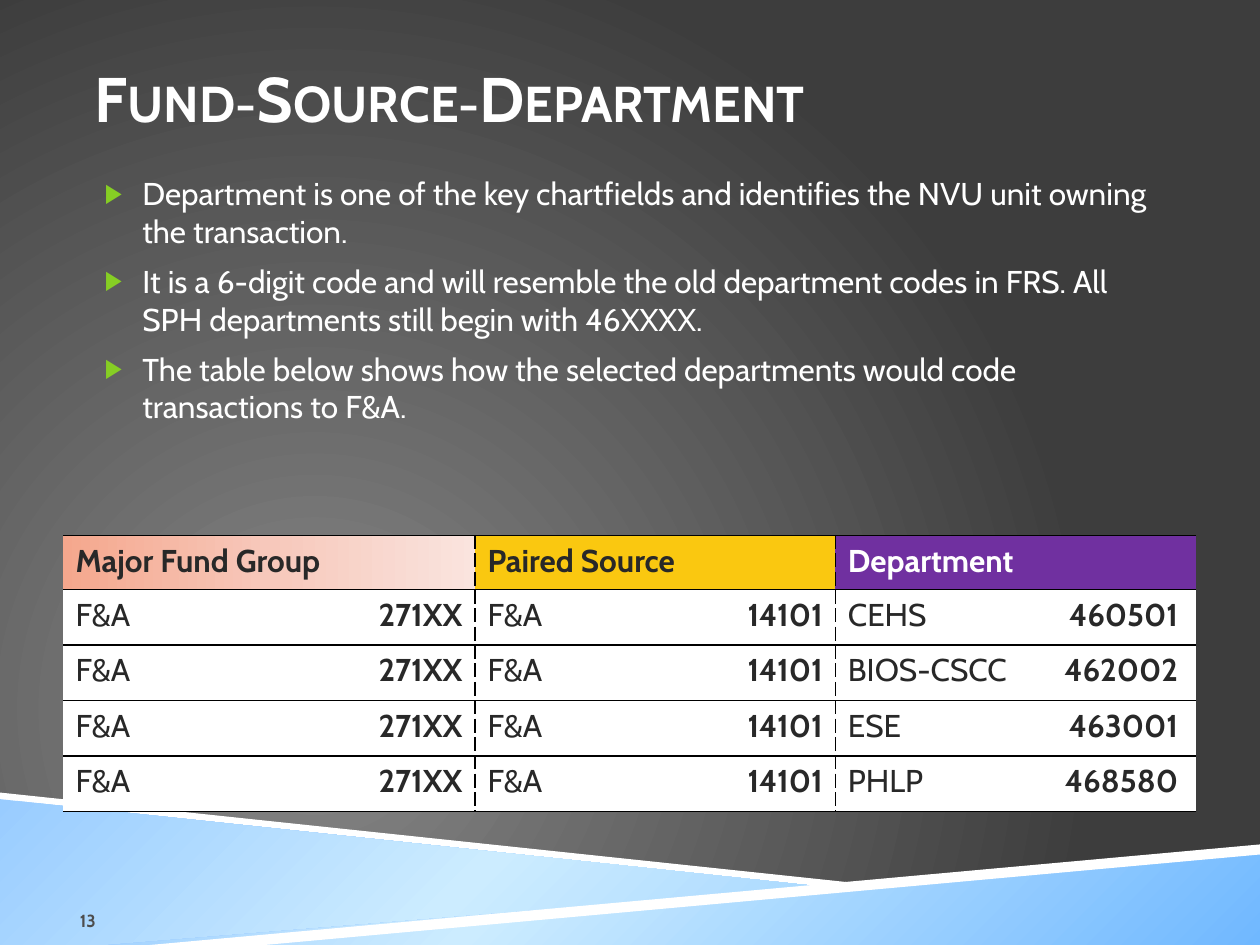
from lxml import etree
from pptx import Presentation
from pptx import util as u
from pptx.dml.color import RGBColor
from pptx.enum import shapes, text
from pptx.oxml import parse_xml
from pptx.oxml.ns import nsdecls, qn

FONT = "Cabin"
WHITE, INK, BLACK = "FFFFFF", "282828", "000000"
SKY = [(0, "70B8FF"), (64, "CCECFF"), (100, "99CCFF")]
SALMON = [(0, "F5A78D"), (50, "F7C8BB"), (100, "FAE4DE")]

BULLETS = [
    "Department is one of the key chartfields and identifies the NVU unit owning the transaction.",
    "It is a 6-digit code and will resemble the old department codes in FRS. "
    "All SPH departments still begin with 46XXXX.",
    "The table below shows how the selected departments would code transactions to F&A.",
]
# heading, heading colour, fill, column width, tab stop
COLUMNS = [
    ("Major Fund Group", INK, None, 3.27, 3.81),
    ("Paired Source", INK, "FAC810", 2.86, 4.87),
    ("Department", WHITE, "7030A0", 2.86, 2.62),
]
DEPARTMENTS = [("CEHS", "460501"), ("BIOS-CSCC", "462002"),
               ("ESE", "463001"), ("PHLP", "468580")]


def rgb(code):
    return RGBColor.from_string(code)


def set_font(font, size, color, bold=False):
    font.name, font.size, font.bold = FONT, u.Pt(size), bold
    font.color.rgb = rgb(color)


def paint_gradient(fill, owner, stops, focus=None):
    """Fill with a gradient: left to right, or round the focus (l, t, r, b in percent)."""
    fill.solid()
    solid = next(owner.iter(qn("a:solidFill")))
    marks = "".join(f'<a:gs pos="{at * 1000}"><a:srgbClr val="{code}"/></a:gs>'
                    for at, code in stops)
    shade = '<a:lin ang="0" scaled="0"/>'
    if focus:
        sides = " ".join(f'{side}="{share * 1000}"' for side, share in zip("ltrb", focus))
        shade = f'<a:path path="circle"><a:fillToRect {sides}/></a:path>'
    solid.getparent().replace(solid, parse_xml(
        f'<a:gradFill {nsdecls("a")} rotWithShape="1"><a:gsLst>{marks}</a:gsLst>{shade}</a:gradFill>'))


def add_band(slide, points):
    corners = [(u.Inches(x), u.Inches(y)) for x, y in points]
    builder = slide.shapes.build_freeform(*corners[0])
    builder.add_line_segments(corners[1:], close=True)
    band = builder.convert_to_shape()
    band.shadow.inherit = False
    band.fill.solid()
    band.fill.fore_color.rgb = rgb(WHITE)
    band.line.fill.background()


def add_wedge(slide, left, top, width, height, rotation, flip=False):
    wedge = slide.shapes.add_shape(shapes.MSO_SHAPE.ISOSCELES_TRIANGLE,
                                   *map(u.Inches, (left, top, width, height)))
    wedge.adjustments[0] = 0
    wedge.rotation = rotation
    if flip:
        wedge.element.spPr.find(qn("a:xfrm")).set("flipH", "1")
    wedge.shadow.inherit = False
    wedge.line.fill.background()
    paint_gradient(wedge.fill, wedge.element.spPr, SKY, (100, 100, 0, 0))


def place_text(shape, left, top, width, height, anchor):
    shape.left, shape.top, shape.width, shape.height = map(u.Inches, (left, top, width, height))
    frame = shape.text_frame
    frame.word_wrap = True
    frame.auto_size = text.MSO_AUTO_SIZE.NONE
    frame.vertical_anchor = anchor
    frame.margin_left = frame.margin_right = 0
    frame.margin_top = frame.margin_bottom = u.Inches(0.05)
    return frame


def add_title(slide):
    title = slide.shapes.title
    slide.shapes.element.append(title.element)  # in front of the wedges
    frame = place_text(title, 0.75, 0.3, 8.5, 0.95, text.MSO_ANCHOR.MIDDLE)
    frame.text = "Fund-Source-Department"
    heading = frame.paragraphs[0]
    heading.alignment = text.PP_ALIGN.LEFT
    set_font(heading.font, 36, WHITE, True)
    next(title.element.iter(qn("a:defRPr"))).set("cap", "small")


def add_bullets(slide):
    body = slide.placeholders[1]
    slide.shapes.element.append(body.element)
    frame = place_text(body, 0.75, 1.33, 8.5, 4.95, text.MSO_ANCHOR.TOP)
    frame.text = "\n".join(BULLETS)
    marks = [f'<a:buClr {nsdecls("a")}><a:srgbClr val="86CE24"/></a:buClr>',
             f'<a:buSzPct {nsdecls("a")} val="85000"/>',
             f'<a:buChar {nsdecls("a")} char="▶"/>']
    for point in frame.paragraphs:
        point.space_before = u.Pt(7)
        set_font(point.font, 18, WHITE)
        props = point._p.get_or_add_pPr()
        props.set("marL", str(u.Inches(0.38)))
        props.set("indent", str(u.Inches(-0.3)))
        for mark in marks:
            props.find(qn("a:defRPr")).addprevious(parse_xml(mark))


def add_page_number(slide):
    box = slide.shapes.add_textbox(0, 0, 0, 0)
    frame = place_text(box, 0.26, 6.99, 0.5, 0.4, text.MSO_ANCHOR.BOTTOM)
    frame.margin_bottom = 0
    number = frame.paragraphs[0]
    number.text = "13"
    number.alignment = text.PP_ALIGN.RIGHT
    set_font(number.font, 10, "4D4D4D", True)


def set_borders(cell, col):
    """Solid rules above and below, dashed rules between columns, open outer sides."""
    styles = {"lnL": "dash" if col else None,
              "lnR": "dash" if col < len(COLUMNS) - 1 else None,
              "lnT": "solid", "lnB": "solid"}
    props = cell._tc.get_or_add_tcPr()
    for place, (side, dash) in enumerate(styles.items()):
        line = etree.Element(qn(f"a:{side}"), w=str(u.Pt(1)))
        if dash:
            color = etree.SubElement(line, qn("a:solidFill"))
            etree.SubElement(color, qn("a:srgbClr"), val=BLACK)
            etree.SubElement(line, qn("a:prstDash"), val=dash)
        else:
            etree.SubElement(line, qn("a:noFill"))
        props.insert(place, line)


def fill_cell(cell, col, color):
    if color:
        cell.fill.solid()
        cell.fill.fore_color.rgb = rgb(color)
    else:
        paint_gradient(cell.fill, cell._tc.get_or_add_tcPr(), SALMON)
    set_borders(cell, col)


def write_entry(cell, label, code, tab_stop):
    entry = cell.text_frame.paragraphs[0]
    set_font(entry.font, 18, INK)
    tabs = parse_xml(f'<a:tabLst {nsdecls("a")}><a:tab pos="{u.Inches(tab_stop)}" algn="r"/></a:tabLst>')
    entry._p.get_or_add_pPr().find(qn("a:defRPr")).addprevious(tabs)
    for words, bold in ((label + "\t", False), (code, True)):
        run = entry.add_run()
        run.text = words
        run.font.bold = bold


def add_fund_table(slide):
    frame = slide.shapes.add_table(len(DEPARTMENTS) + 1, len(COLUMNS), u.Inches(0.5),
                                   u.Inches(4.25), u.Inches(9), u.Inches(2.19))
    table = frame.table
    table.first_row = table.horz_banding = False
    for row in table.rows:
        row.height = u.Inches(0.44)
    table.rows[0].height = u.Inches(0.43)
    for col, (heading, color, fill, width, tab_stop) in enumerate(COLUMNS):
        table.columns[col].width = u.Inches(width)
        head = table.cell(0, col)
        head.text = heading
        set_font(head.text_frame.paragraphs[0].font, 18, color, True)
        fill_cell(head, col, fill)
        for row, department in enumerate(DEPARTMENTS, 1):
            entries = [("F&A", "271XX"), ("F&A", "14101"), department]
            cell = table.cell(row, col)
            write_entry(cell, *entries[col], tab_stop)
            fill_cell(cell, col, WHITE)


def main():
    deck = Presentation()
    deck.slide_width, deck.slide_height = u.Inches(10), u.Inches(7.5)
    slide = deck.slides.add_slide(deck.slide_layouts[1])

    # Backdrop
    paint_gradient(slide.background.fill, slide.element,
                   [(0, "878787"), (100, "3D3D3D")], (50, 100, 100, 50))
    add_band(slide, [(0, 6.29), (0, 6.36), (7.9, 7.2), (8.32, 7.17)])
    add_wedge(slide, 4.93, 1.39, 1.18, 11.08, 90, flip=True)
    add_wedge(slide, 5, 2.5, 0.75, 9.27, 270)
    add_band(slide, [(10.02, 6.7), (1.08, 7.51), (1.99, 7.51), (10.02, 6.78)])

    # Content
    add_title(slide)
    add_bullets(slide)
    add_page_number(slide)
    add_fund_table(slide)
    deck.save("out.pptx")


if __name__ == "__main__":
    main()
